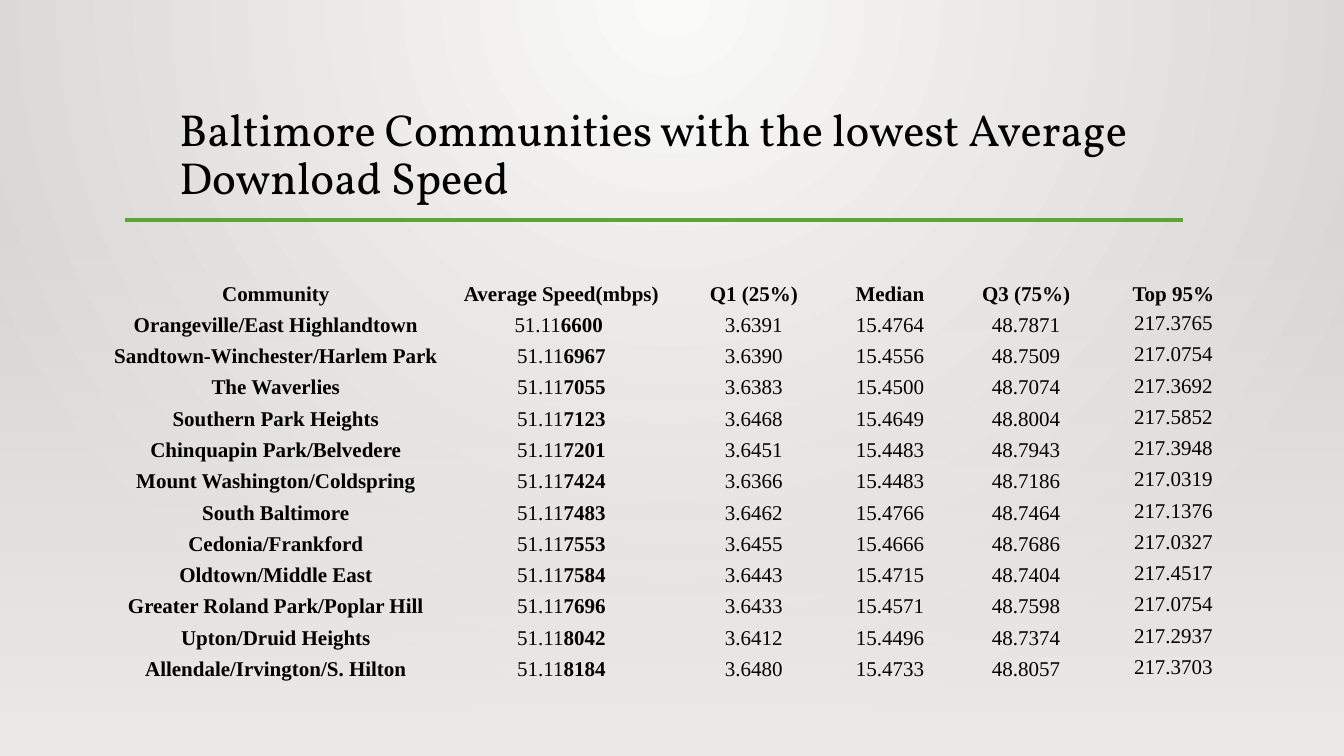
"""Build a slide with a table of Baltimore's slowest communities for downloads."""
from lxml.etree import SubElement as Sub
from pptx import Presentation
from pptx.dml.color import RGBColor
from pptx.enum.shapes import MSO_CONNECTOR as Link, MSO_SHAPE as Shape
from pptx.enum.text import MSO_ANCHOR as Anchor, MSO_AUTO_SIZE as Fit, PP_ALIGN as Align
from pptx.oxml import parse_xml
from pptx.oxml.ns import nsdecls, qn
from pptx.util import Pt

BLACK = RGBColor(0x00, 0x00, 0x00)
GREEN = RGBColor(0x5F, 0xA5, 0x34)
LIGHT = RGBColor(0xFA, 0xFA, 0xF9)
GRAY = RGBColor(0xD7, 0xD5, 0xD2)
SAND = RGBColor(0xED, 0xEB, 0xE7)

WIDE, HIGH = 960, 540
PLAIN = "{2D5ABB26-0587-4C30-8999-92F81FD0307C}"
GLOW = '<a:path path="circle"><a:fillToRect l="43000" r="43000" b="100000"/></a:path>'
DOWN = '<a:lin ang="5400000" scaled="0"/>'

COLS = [244, 164, 111, 83.5, 111, 99.5]
HEAD = ["Community", "Average Speed(mbps)", "Q1 (25%)", "Median", "Q3 (75%)", "Top 95%"]
ROWS = [
    ["Orangeville/East Highlandtown", "51.116600 ", "3.6391", "15.4764", "48.7871", "217.3765"],
    ["Sandtown-Winchester/Harlem Park", "51.116967", "3.6390", "15.4556", "48.7509", "217.0754"],
    ["The Waverlies", "51.117055", "3.6383", "15.4500", "48.7074", "217.3692"],
    ["Southern Park Heights", "51.117123", "3.6468", "15.4649", "48.8004", "217.5852"],
    ["Chinquapin Park/Belvedere", "51.117201", "3.6451", "15.4483", "48.7943", "217.3948"],
    ["Mount Washington/Coldspring", "51.117424", "3.6366", "15.4483", "48.7186", "217.0319"],
    ["South Baltimore", "51.117483", "3.6462", "15.4766", "48.7464", "217.1376"],
    ["Cedonia/Frankford", "51.117553", "3.6455", "15.4666", "48.7686", "217.0327"],
    ["Oldtown/Middle East", "51.117584", "3.6443", "15.4715", "48.7404", "217.4517"],
    ["Greater Roland Park/Poplar Hill", "51.117696", "3.6433", "15.4571", "48.7598", "217.0754"],
    ["Upton/Druid Heights", "51.118042", "3.6412", "15.4496", "48.7374", "217.2937"],
    ["Allendale/Irvington/S. Hilton", "51.118184", "3.6480", "15.4733", "48.8057", "217.3703"],
]


class Deck:
    """Holds the style and the current slide."""

    def __init__(self):
        self.show = Presentation()
        self.show.slide_width, self.show.slide_height = Pt(WIDE), Pt(HIGH)
        self.slide = self.show.slides.add_slide(self.show.slide_layouts[5])
        self.shapes = self.slide.shapes
        self.serif, self.body = "Vollkorn", "Times New Roman"

    def title(self, text, x, y, w, h):
        """Fill and place the title."""
        box = self.shapes.title
        box.left, box.top, box.width, box.height = map(Pt, (x, y, w, h))
        frame = box.text_frame
        frame.text = text
        frame.word_wrap, frame.auto_size = True, Fit.NONE
        frame.vertical_anchor = Anchor.BOTTOM
        self.inset(frame, 7.2, 3.6, 0)
        para = frame.paragraphs[0]
        para.alignment, para.line_spacing = Align.LEFT, 0.9
        self.font(para.runs[0], self.serif, 32, False)

    def panel(self, y, h, first, last, alpha, turn):
        """Add a full-width gradient panel behind everything but earlier panels."""
        box = self.shapes.add_shape(Shape.RECTANGLE, 0, Pt(y), Pt(WIDE), Pt(h))
        box.shadow.inherit = False
        box.line.fill.background()
        box.fill.background()
        old = box.element.spPr.find(qn("a:noFill"))
        old.getparent().replace(old, parse_xml(
            f'<a:gradFill {nsdecls("a")} rotWithShape="1"><a:gsLst>'
            f'<a:gs pos="0"><a:srgbClr val="{first}"><a:alpha val="{alpha * 1000}"/></a:srgbClr></a:gs>'
            f'<a:gs pos="100000"><a:srgbClr val="{last}"/></a:gs>'
            f'</a:gsLst>{turn}</a:gradFill>'))
        return box

    def rule(self, x, y, end):
        """Add a horizontal rule."""
        line = self.shapes.add_connector(Link.STRAIGHT, Pt(x), Pt(y), Pt(end), Pt(y))
        line.line.color.rgb, line.line.width = GREEN, Pt(2.5)
        Sub(line.element.spPr, qn("a:effectLst"))

    def table(self, rows, cols, x, y, pitch):
        """Add an unruled table."""
        frame = self.shapes.add_table(len(rows), len(cols), Pt(x), Pt(y),
                                      Pt(sum(cols)), Pt(pitch * len(rows)))
        next(frame.element.iter(qn("a:tableStyleId"))).text = PLAIN
        grid = frame.table
        grid.first_row = grid.horz_banding = False
        for col, w in zip(grid.columns, cols):
            col.width = Pt(w)
        for r, row in enumerate(rows):
            grid.rows[r].height = Pt(pitch)
            for c, text in enumerate(row):
                self.cell(grid.cell(r, c), text, r, c)

    def cell(self, cell, text, r, c):
        """Fill a cell, splitting the average speed into plain and bold digits."""
        cell.fill.background()
        cell.vertical_anchor = Anchor.BOTTOM
        if r and c == 5:
            self.inset(cell, 2.2, 1.4, 1.4)
        else:
            self.inset(cell, 0.7, 0.7, 0)
        para = cell.text_frame.paragraphs[0]
        para.alignment = Align.CENTER
        bold = r == 0 or c == 0
        parts = [(text, bold)]
        if r and c == 1:
            parts = [(text[:5], False), (text[5:], True)]
        for part, bold in parts:
            run = para.add_run()
            run.text = part
            self.font(run, self.body, 15, bold)

    def inset(self, box, side, top, base):
        """Set the margins of a cell or text frame."""
        box.margin_left = box.margin_right = Pt(side)
        box.margin_top, box.margin_bottom = Pt(top), Pt(base)

    def font(self, run, name, size, bold):
        """Set the font of a run."""
        font = run.font
        font.name, font.size, font.bold = name, Pt(size), bold
        font.color.rgb = BLACK


def main():
    """Build and save the slide."""
    deck = Deck()
    back = deck.panel(0, HIGH, LIGHT, GRAY, 100, GLOW)
    deck.shapes.title.element.addprevious(back.element)
    deck.title("Baltimore Communities with the lowest Average Download Speed",
               121, 63.4, 749.5, 82.8)
    deck.rule(89.3, 157, 845.3)
    deck.panel(159, HIGH - 159, SAND, SAND, 0, DOWN)
    deck.table([HEAD] + ROWS, COLS, 75, 196, 22.35)
    deck.show.save("out.pptx")


if __name__ == "__main__":
    main()
